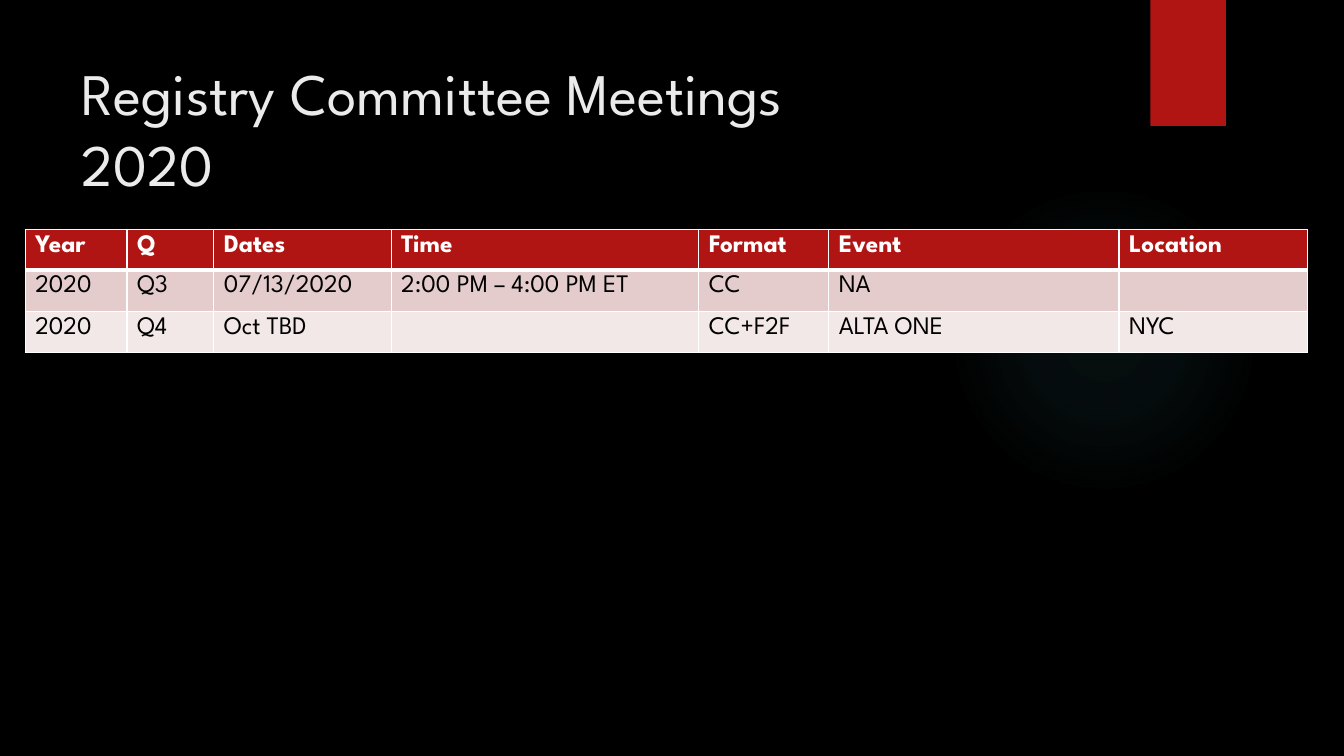
import pptx
import pptx.dml.color
import pptx.enum.shapes
import pptx.enum.text
import pptx.oxml
import pptx.oxml.ns
import pptx.util
from pptx.util import Inches

COLORS = {
    "background": "000000",
    "glow": "50B9C1",
    "accent": "B01513",
    "title": "EBEBEB",
    "white": "FFFFFF",
    "black": "000000",
    "odd_row": "E4CCCC",
    "even_row": "F2E8E7",
}
FONT = "League Spartan"
GLOW_STOPS = [(0, 7), (36, 6), (69, 0)]
COLUMN_WIDTHS = [1.01, 0.86, 1.76, 3.05, 1.29, 2.88, 1.87]
ROW_HEIGHTS = [0.4, 0.41, 0.41]
MEETINGS = [
    ["Year", "Q", "Dates", "Time", "Format", "Event", "Location"],
    ["2020", "Q3", "07/13/2020", "2:00 PM – 4:00 PM ET", "CC", "NA", ""],
    ["2020", "Q4", "Oct TBD", "", "CC+F2F", "ALTA ONE", "NYC"],
]


def rgb(color):
    return pptx.dml.color.RGBColor.from_string(COLORS[color])


def write_text(frame, text, size=18, color="black", bold=False):
    """Fill the first paragraph; each newline becomes a line break."""
    paragraph = frame.paragraphs[0]
    for index, line in enumerate(text.split("\n")):
        if index:
            paragraph.add_line_break()
        run = paragraph.add_run()
        run.text = line
        run.font.name = FONT
        run.font.size = pptx.util.Pt(size)
        run.font.bold = bold
        run.font.color.rgb = rgb(color)


def add_cell_borders(cell, color, bottom_width):
    properties = cell._tc.get_or_add_tcPr()
    for side, width in (("L", 1), ("R", 1), ("T", 1), ("B", bottom_width)):
        properties.append(pptx.oxml.parse_xml(
            f'<a:ln{side} {pptx.oxml.ns.nsdecls("a")} w="{pptx.util.Pt(width)}">'
            f'<a:solidFill><a:srgbClr val="{COLORS[color]}"/></a:solidFill>'
            f'</a:ln{side}>'))


class MeetingSlide:
    def __init__(self, presentation):
        self.slide = presentation.slides.add_slide(presentation.slide_layouts[6])
        background = self.slide.background.fill
        background.solid()
        background.fore_color.rgb = rgb("background")

    def shape(self, preset, left, top, width, height, color):
        shape = self.slide.shapes.add_shape(
            preset, Inches(left), Inches(top), Inches(width), Inches(height))
        shape.shadow.inherit = False
        shape.fill.solid()
        shape.fill.fore_color.rgb = rgb(color)
        shape.line.fill.background()
        return shape

    def glow(self, left, top, diameter):
        """Add a circle that fades out from its centre."""
        circle = self.shape(pptx.enum.shapes.MSO_SHAPE.OVAL,
                            left, top, diameter, diameter, "glow")
        stops = "".join(
            f'<a:gs pos="{position * 1000}"><a:srgbClr val="{COLORS["glow"]}">'
            f'<a:alpha val="{alpha * 1000}"/></a:srgbClr></a:gs>'
            for position, alpha in GLOW_STOPS)
        gradient = pptx.oxml.parse_xml(
            f'<a:gradFill {pptx.oxml.ns.nsdecls("a")} rotWithShape="1">'
            f'<a:gsLst>{stops}</a:gsLst><a:path path="circle">'
            '<a:fillToRect l="50000" t="50000" r="50000" b="50000"/>'
            '</a:path></a:gradFill>')
        properties = circle._element.spPr
        solid = properties.find(pptx.oxml.ns.qn("a:solidFill"))
        properties.replace(solid, gradient)

    def title(self, text, left, top, width, height):
        box = self.slide.shapes.add_textbox(
            Inches(left), Inches(top), Inches(width), Inches(height))
        box.text_frame.word_wrap = True
        box.text_frame.vertical_anchor = pptx.enum.text.MSO_ANCHOR.MIDDLE
        write_text(box.text_frame, text, size=42, color="title")

    def table(self, rows, left, top):
        table = self.slide.shapes.add_table(
            len(rows), len(COLUMN_WIDTHS), Inches(left), Inches(top),
            Inches(sum(COLUMN_WIDTHS)), Inches(sum(ROW_HEIGHTS))).table
        for column, width in zip(table.columns, COLUMN_WIDTHS):
            column.width = Inches(width)
        for row, height in zip(table.rows, ROW_HEIGHTS):
            row.height = Inches(height)
        fills = ["accent", "odd_row", "even_row"]
        for row_index, values in enumerate(rows):
            header = row_index == 0
            for column_index, value in enumerate(values):
                cell = table.cell(row_index, column_index)
                add_cell_borders(cell, "white", 3 if header else 1)
                cell.fill.solid()
                cell.fill.fore_color.rgb = rgb(fills[row_index])
                if value:
                    write_text(cell.text_frame, value, bold=header,
                               color="white" if header else "black")


def main():
    presentation = pptx.Presentation()
    presentation.slide_width = Inches(13.33)
    presentation.slide_height = Inches(7.5)
    slide = MeetingSlide(presentation)
    slide.glow(9.41, 1.83, 3.08)
    slide.shape(pptx.enum.shapes.MSO_SHAPE.RECTANGLE, 11.41, 0, 0.75, 1.25, "accent")
    slide.title("Registry Committee Meetings\n2020", 0.71, 0.5, 10.29, 1.53)
    slide.table(MEETINGS, 0.25, 2.28)
    presentation.save("out.pptx")


if __name__ == "__main__":
    main()
